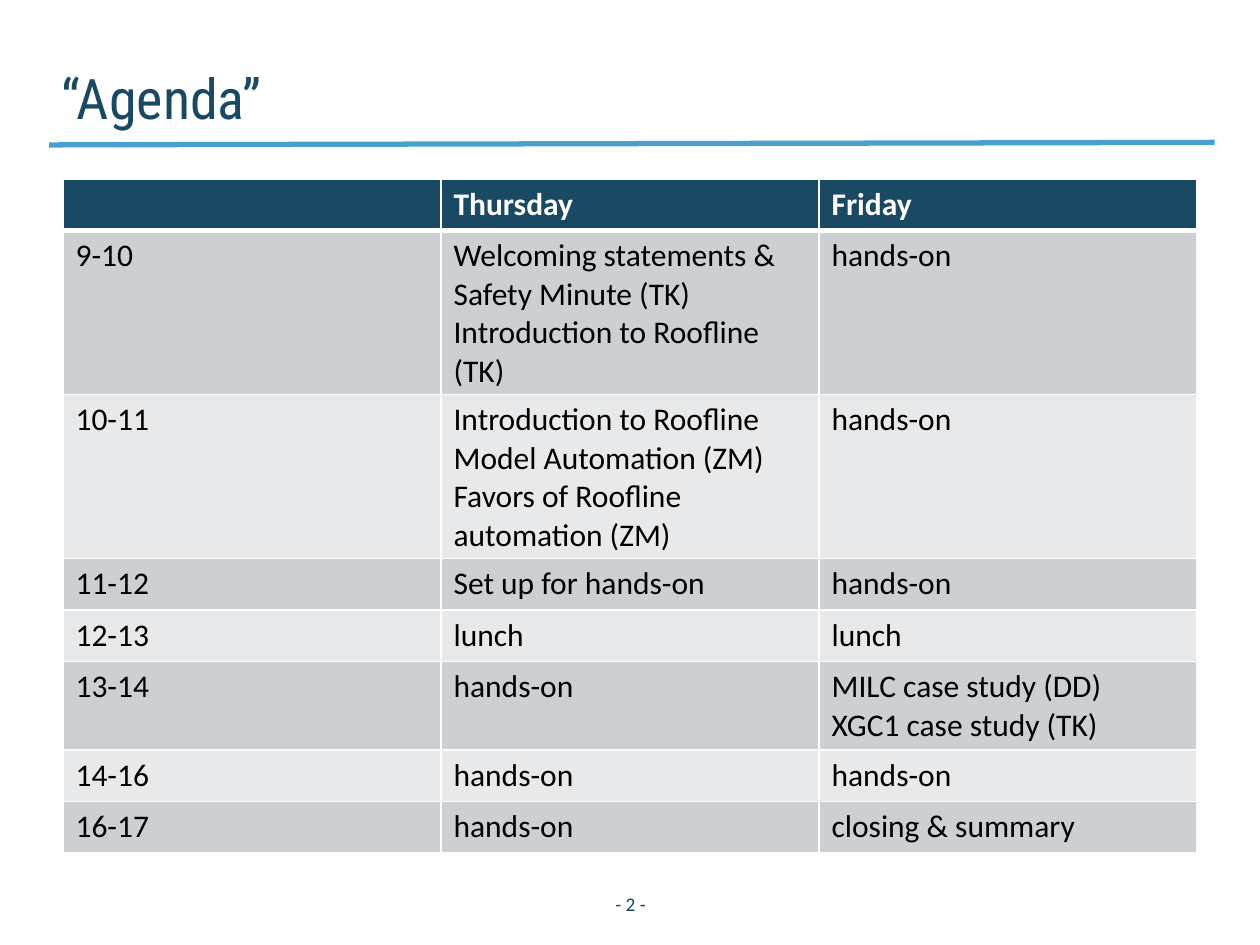
from lxml.etree import SubElement
from pptx import Presentation
from pptx.dml.color import RGBColor
from pptx.enum.shapes import MSO_CONNECTOR
from pptx.enum.text import MSO_ANCHOR, PP_ALIGN
from pptx.oxml.ns import qn
from pptx.util import Inches, Pt

COLORS = {
    "navy": "194963",
    "footer": "114766",
    "rule": "46A0D0",
    "white": "FFFFFF",
    "black": "000000",
    "dark_band": "CCD0D3",
    "light_band": "E8E9EA",
}

AGENDA = [
    ("", "Thursday", "Friday"),
    ("9-10", "Welcoming statements & Safety Minute (TK)\nIntroduction to Roofline (TK)", "hands-on"),
    (
        "10-11",
        ("Introduction to Roofline Model Automation (ZM)", "Favors of Roofline automation (ZM)"),
        "hands-on",
    ),
    ("11-12", "Set up for hands-on", "hands-on"),
    ("12-13", "lunch", "lunch"),
    ("13-14", "hands-on", "MILC case study (DD)\nXGC1 case study (TK)"),
    ("14-16", "hands-on", "hands-on"),
    ("16-17", "hands-on", "closing & summary"),
]


def rgb(name):
    return RGBColor.from_string(COLORS[name])


def write_text(text_frame, text, size=18, font="Calibri", color="black", bold=False, align=PP_ALIGN.LEFT):
    paragraphs = (text,) if isinstance(text, str) else text
    for index, content in enumerate(paragraphs):
        paragraph = text_frame.add_paragraph() if index else text_frame.paragraphs[0]
        paragraph.text = content
        paragraph.alignment = align
        paragraph.font.size = Pt(size)
        paragraph.font.name = font
        paragraph.font.bold = bold
        paragraph.font.color.rgb = rgb(color)


class SlideBuilder:
    """Holds the style and the current slide."""

    def __init__(self, slide, border="white"):
        self.slide = slide
        self.border = border

    def add_rule(self, start, end, color, width):
        points = [Inches(value) for value in (*start, *end)]
        connector = self.slide.shapes.add_connector(MSO_CONNECTOR.STRAIGHT, *points)
        connector.line.color.rgb = rgb(color)
        connector.line.width = Pt(width)
        SubElement(connector.element.spPr, qn("a:effectLst"))

    def add_text(self, box, text, anchor, margins=(0.1, 0.05), **text_format):
        shape = self.slide.shapes.add_textbox(*[Inches(value) for value in box])
        frame = shape.text_frame
        frame.word_wrap = True
        frame.vertical_anchor = anchor
        frame.margin_left = frame.margin_right = Inches(margins[0])
        frame.margin_top = frame.margin_bottom = Inches(margins[1])
        write_text(frame, text, **text_format)

    def add_cell_borders(self, cell, widths):
        properties = cell._tc.get_or_add_tcPr()
        for side, width in zip("LRTB", widths):
            line = SubElement(properties, qn(f"a:ln{side}"), w=str(Pt(width)))
            fill = SubElement(line, qn("a:solidFill"))
            SubElement(fill, qn("a:srgbClr"), val=COLORS[self.border])

    def add_table(self, left, top, column_width, row_height, rows):
        column_count = len(rows[0])
        table = self.slide.shapes.add_table(
            len(rows), column_count, Inches(left), Inches(top),
            Inches(column_width * column_count), Inches(row_height * len(rows)),
        ).table
        for column in table.columns:
            column.width = Inches(column_width)
        for row_index, row in enumerate(rows):
            table.rows[row_index].height = Inches(row_height)
            header = row_index == 0
            band = "navy" if header else "dark_band" if row_index % 2 else "light_band"
            widths = (1, 1, 3 if row_index == 1 else 1, 3 if header else 1)
            for column_index, text in enumerate(row):
                cell = table.cell(row_index, column_index)
                self.add_cell_borders(cell, widths)
                cell.fill.solid()
                cell.fill.fore_color.rgb = rgb(band)
                write_text(cell.text_frame, text, color="white" if header else "black", bold=header)


def main():
    presentation = Presentation()
    presentation.slide_width = Inches(10)
    presentation.slide_height = Inches(7.5)
    builder = SlideBuilder(presentation.slides.add_slide(presentation.slide_layouts[6]))
    builder.add_rule((0.39, 1.15), (9.64, 1.13), "rule", 3)
    builder.add_text(
        (0.39, 0.2, 7.46, 0.84), "“Agenda”", MSO_ANCHOR.BOTTOM, margins=(0.1, 0),
        size=32, font="Roboto Condensed", color="navy",
    )
    builder.add_table(0.5, 1.42, 3, 0.41, AGENDA)
    builder.add_text(
        (4.5, 6.97, 1.01, 0.4), "- 2 -", MSO_ANCHOR.MIDDLE,
        size=11, color="footer", align=PP_ALIGN.CENTER,
    )
    presentation.save("out.pptx")


if __name__ == "__main__":
    main()
